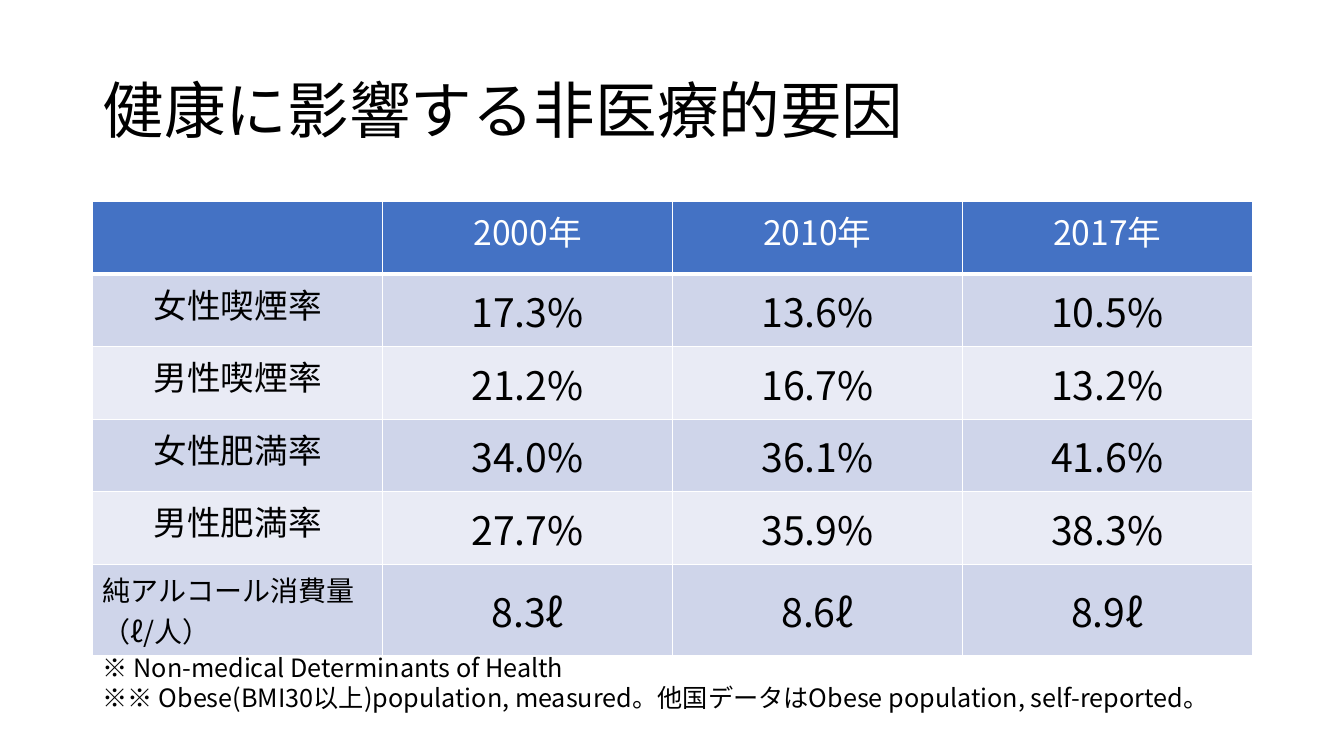
from lxml.etree import SubElement
from pptx import Presentation
from pptx.dml.color import RGBColor
from pptx.enum.text import MSO_ANCHOR, MSO_AUTO_SIZE, PP_ALIGN
from pptx.oxml.ns import qn
from pptx.util import Inches, Pt

TITLE = "健康に影響する非医療的要因"
YEARS = ["", "2000年", "2010年", "2017年"]
FACTORS = [
    ("女性喫煙率", "17.3%", "13.6%", "10.5%"),
    ("男性喫煙率", "21.2%", "16.7%", "13.2%"),
    ("女性肥満率", "34.0%", "36.1%", "41.6%"),
    ("男性肥満率", "27.7%", "35.9%", "38.3%"),
    ("純アルコール消費量（ℓ/人）", "8.3ℓ", "8.6ℓ", "8.9ℓ"),
]
NOTES = [
    "※ Non-medical Determinants of Health",
    "※※ Obese(BMI30以上)population, measured。他国データはObese population, self-reported。",
]
FONT = "Noto Sans CJK JP"
COLORS = {"text": "000000", "header": "4472C4", "odd": "CFD5EA",
          "even": "E9EBF5", "white": "FFFFFF"}
LEFT, WIDTH = 0.92, 11.5
ROW_HEIGHT, ALCOHOL_ROW_HEIGHT = 0.72, 0.91


def style_runs(paragraph, size, color):
    for run in paragraph.runs:
        run.font.size = Pt(size)
        run.font.bold = False
        run.font.name = FONT
        run.font.color.rgb = RGBColor.from_string(COLORS[color])
        SubElement(run.font._element, qn("a:ea"), typeface=FONT)


def add_text(slide, lines, box, size, line_spacing):
    frame = slide.shapes.add_textbox(*map(Inches, box)).text_frame
    frame.word_wrap = True
    frame.text = "\n".join(lines)
    for paragraph in frame.paragraphs:
        paragraph.line_spacing = line_spacing
        style_runs(paragraph, size, "text")
    return frame


def set_borders(cell, bottom):
    properties = cell._tc.get_or_add_tcPr()
    for side, points in (("L", 1), ("R", 1), ("T", 1), ("B", bottom)):
        line = SubElement(properties, qn(f"a:ln{side}"), w=str(Pt(points)))
        fill = SubElement(line, qn("a:solidFill"))
        SubElement(fill, qn("a:srgbClr"), val=COLORS["white"])


def fill_cell(cell, text, row, column):
    is_header, is_label = row == 0, column == 0
    is_last_label = is_label and row == len(FACTORS)
    set_borders(cell, bottom=3 if is_header else 1)
    fill = "header" if is_header else "odd" if row % 2 else "even"
    cell.fill.solid()
    cell.fill.fore_color.rgb = RGBColor.from_string(COLORS[fill])
    if not (is_header or is_label):
        cell.vertical_anchor = MSO_ANCHOR.MIDDLE
    cell.text = text
    paragraph = cell.text_frame.paragraphs[0]
    paragraph.alignment = PP_ALIGN.LEFT if is_last_label else PP_ALIGN.CENTER
    size = 20 if is_last_label else 24 if is_header or is_label else 28
    style_runs(paragraph, size, "white" if is_header else "text")


def add_factor_table(slide):
    rows = [YEARS, *FACTORS]
    heights = [ROW_HEIGHT] * len(FACTORS) + [ALCOHOL_ROW_HEIGHT]
    table = slide.shapes.add_table(
        len(rows), len(YEARS), Inches(LEFT), Inches(2),
        Inches(WIDTH), Inches(sum(heights))).table
    for r, (values, height) in enumerate(zip(rows, heights)):
        table.rows[r].height = Inches(height)
        for c, text in enumerate(values):
            fill_cell(table.cell(r, c), text, r, c)


def main():
    deck = Presentation()
    deck.slide_width, deck.slide_height = Inches(13.33), Inches(7.5)
    slide = deck.slides.add_slide(deck.slide_layouts[6])
    title = add_text(slide, [TITLE], (LEFT, 0.4, WIDTH, 1.45), 44, 0.9)
    title.vertical_anchor = MSO_ANCHOR.MIDDLE
    add_factor_table(slide)
    notes = add_text(slide, NOTES, (LEFT, 6.42, 11.28, 0.71), 18, 1.0)
    notes.auto_size = MSO_AUTO_SIZE.SHAPE_TO_FIT_TEXT
    deck.save("out.pptx")


if __name__ == "__main__":
    main()
